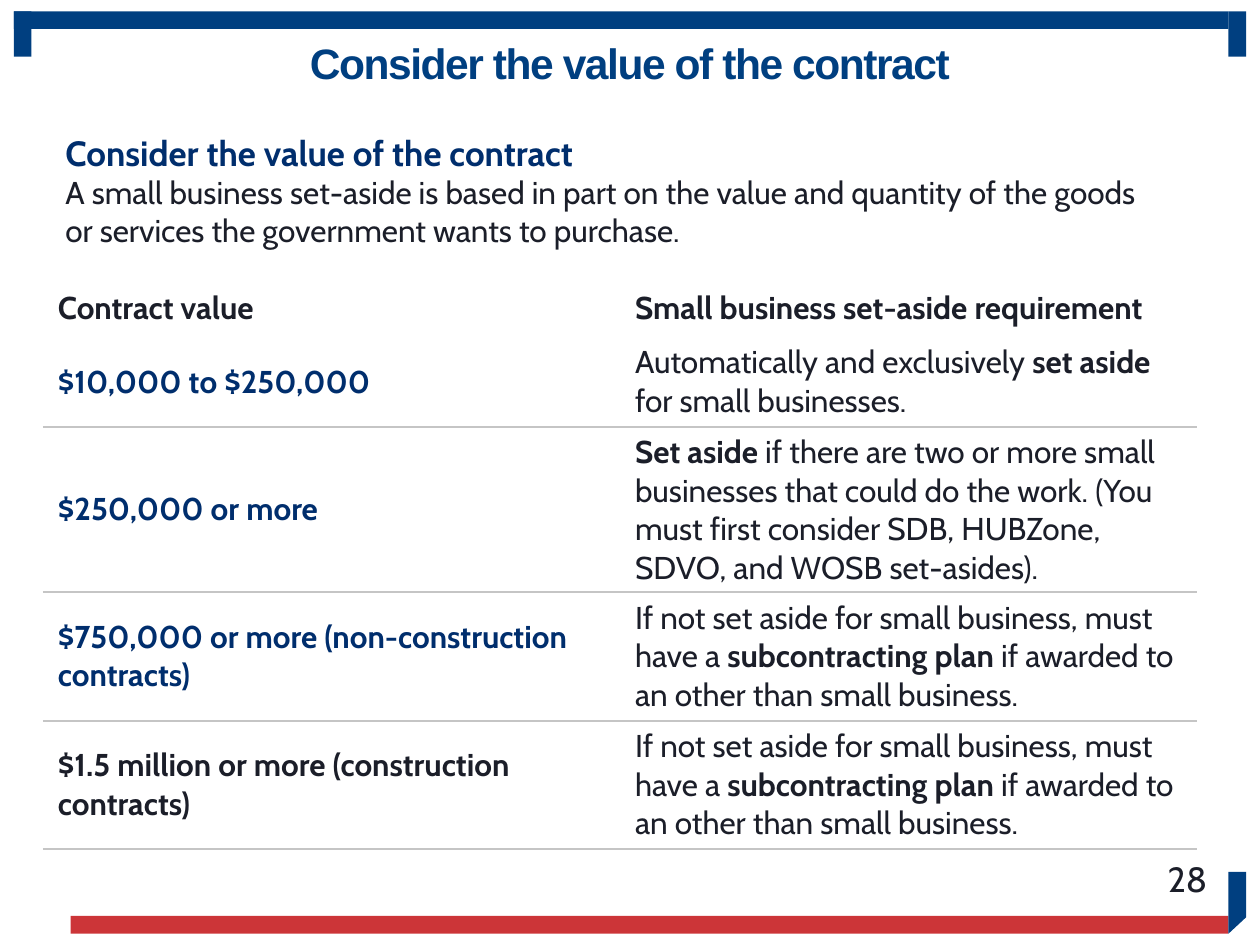
from lxml import etree
from pptx import Presentation
from pptx.dml.color import RGBColor
from pptx.enum import shapes, text
from pptx.oxml.ns import qn
from pptx.util import Inches, Pt

HUES = {"blue": "003F80", "red": "CC3538", "navy": "002E6D",
        "ink": "1B1E29", "rule": "C5C5C5"}
TITLE = "Consider the value of the contract"
INTRO = ("A small business set-aside is based in part on the value and quantity "
         "of the goods or services the government wants to purchase.")
PLAN = ("If not set aside for small business, must have a *subcontracting plan* "
        "if awarded to an other than small business.")
ROWS = [
    (0.45, "ink", "Contract value", "*Small business set-aside requirement*"),
    (0.72, "navy", "$10,000 to $250,000",
     "Automatically and exclusively *set aside* for small businesses."),
    (1.31, "navy", "$250,000 or more",
     "*Set aside* if there are two or more small businesses that could do the "
     "work.\u00a0(You must first consider SDB, HUBZone, SDVO, and WOSB set-asides)."),
    (1.02, "navy", "$750,000 or more (non-construction contracts)", PLAN),
    (1.02, "ink", "$1.5 million or more (construction contracts)", PLAN),
]


def tint(name):
    return RGBColor.from_string(HUES[name])


def style(par, size, hue, bold=None, face="Cabin"):
    font = par.font
    font.name, font.size, font.bold = face, Pt(size), bold
    font.color.rgb = tint(hue)


def paint(shape, hue):
    shape.shadow.inherit = False
    shape.fill.solid()
    shape.fill.fore_color.rgb = tint(hue)
    shape.line.fill.background()


def add_bar(slide, box, hue):
    bar = slide.shapes.add_shape(shapes.MSO_SHAPE.RECTANGLE, *map(Inches, box))
    paint(bar, hue)


def add_frame(slide, left, top, right, base):
    thick, drop = 0.14, 0.36
    edge = right - thick
    add_bar(slide, (left, top, edge - left, thick), "blue")
    for x in (left, edge):
        add_bar(slide, (x, top, thick, drop), "blue")
    add_bar(slide, (0.56, base - thick, edge - 0.56, thick), "red")
    tip = base - 0.49
    form = slide.shapes.build_freeform(Inches(edge), Inches(tip))
    form.add_line_segments([(Inches(x), Inches(y)) for x, y in (
        (right, tip), (right, base - 0.13), (edge, base))], close=True)
    paint(form.convert_to_shape(), "blue")


def add_title(slide, box):
    head = slide.shapes.title
    head.left, head.top, head.width, head.height = map(Inches, box)
    par = head.text_frame.paragraphs[0]
    run = par.add_run()
    run.text = TITLE
    run._r.get_or_add_rPr().set("spc", "-80")
    par.alignment = text.PP_ALIGN.CENTER
    par.line_spacing = 0.9
    style(par, 24.3, "blue", True, "Arial")


def add_text(slide, box, parts, align=text.PP_ALIGN.LEFT, foot=0.05):
    frame = slide.shapes.add_textbox(*map(Inches, box)).text_frame
    frame.word_wrap = True
    frame.vertical_anchor = text.MSO_ANCHOR.MIDDLE
    frame.margin_top, frame.margin_bottom = Inches(0.05 if foot else 0), Inches(foot)
    for i, (words, size, hue, bold) in enumerate(parts):
        par = frame.add_paragraph() if i else frame.paragraphs[0]
        par.text = words
        par.alignment = align
        style(par, size, hue, bold)
    return frame


def set_edge(cell, side, ruled):
    props = cell._tc.get_or_add_tcPr()
    line = etree.Element(qn("a:ln" + side), w=str(Pt(1.2) if ruled else 0))
    if ruled:
        fill = etree.SubElement(line, qn("a:solidFill"))
        etree.SubElement(fill, qn("a:srgbClr"), val=HUES["rule"])
    else:
        etree.SubElement(line, qn("a:noFill"))
    props.insert("LRTB".index(side), line)


def fill_cell(cell, words, hue, row):
    cell.fill.background()
    cell.vertical_anchor = text.MSO_ANCHOR.MIDDLE
    cell.margin_left = cell.margin_right = Inches(0.12)
    cell.margin_top = cell.margin_bottom = Inches(0.05)
    par = cell.text_frame.paragraphs[0]
    for i, part in enumerate(words.split("*")):
        if part:
            run = par.add_run()
            run.text = part
            run.font.bold = i % 2 == 1
    style(par, 18, hue)
    for side, ruled in zip("LRTB", (False, False, row > 1, row > 0)):
        set_edge(cell, side, ruled)


def add_grid(slide, box):
    grid = slide.shapes.add_table(len(ROWS), 2, *map(Inches, box)).table
    grid.first_row = grid.horz_banding = False
    for r, (tall, hue, value, need) in enumerate(ROWS):
        grid.rows[r].height = Inches(tall)
        fill_cell(grid.cell(r, 0), f"*{value}*", hue, r)
        fill_cell(grid.cell(r, 1), need, "ink", r)


def main():
    deck = Presentation()
    deck.slide_width, deck.slide_height = Inches(10), Inches(7.5)
    slide = deck.slides.add_slide(deck.slide_layouts[5])
    add_frame(slide, 0.11, 0.09, 9.89, 7.41)
    add_title(slide, (0.5, 0.3, 9, 0.45))
    intro = add_text(slide, (0.42, 1.04, 8.92, 1.03),
                     [(TITLE, 20, "navy", True), (INTRO, 18, "ink", False)], foot=0.09)
    intro.margin_top = 0
    add_grid(slide, (0.34, 2.22, 9.16, 4.52))
    add_text(slide, (7.43, 6.77, 2.25, 0.4), [("28", 20, "ink", False)],
             text.PP_ALIGN.RIGHT)
    deck.save("out.pptx")


if __name__ == "__main__":
    main()
